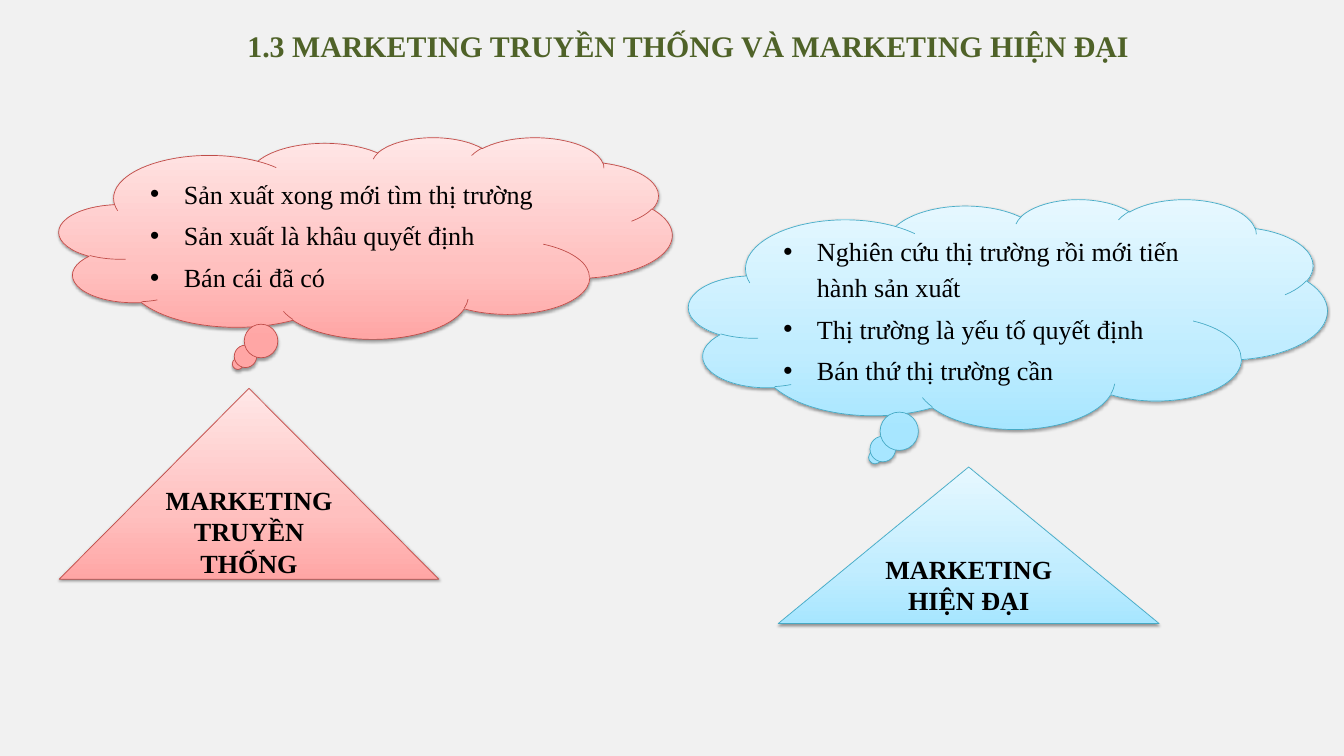
from copy import deepcopy

from lxml import etree
from pptx import Presentation
from pptx import util as u
from pptx.dml import color
from pptx.enum import shapes, text
from pptx.oxml import ns

PX = 9144
FONT = "Times New Roman"
RED = {"stops": ["FFA6A5", "FFC0BF", "FFE7E7"], "line": "BF4C48"}
BLUE = {"stops": ["A7E6FF", "C1EDFF", "E7F8FF"], "line": "46AAC5"}
STOP_POSITIONS = [0, 0.35, 1]


def rgb(value):
    return color.RGBColor.from_string(value)


def emu(*lengths):
    return [u.Emu(length * PX) for length in lengths]


def add_element(parent, tag, **attributes):
    return etree.SubElement(parent, ns.qn(tag), attributes)


def format_runs(paragraph, size, hex_color, bold=False):
    for run in paragraph.runs:
        run.font.name = FONT
        run.font.size = u.Pt(size)
        run.font.bold = bold
        run.font.color.rgb = rgb(hex_color)


def add_title(slide, box, wording):
    title = slide.shapes.title
    title.left, title.top, title.width, title.height = emu(*box)
    frame = title.text_frame
    frame.text = wording
    frame.word_wrap = True
    frame.auto_size = text.MSO_AUTO_SIZE.NONE
    frame.vertical_anchor = text.MSO_ANCHOR.TOP
    frame.paragraphs[0].alignment = text.PP_ALIGN.CENTER
    format_runs(frame.paragraphs[0], 32, "4F6228", bold=True)


def add_gradient_shape(slide, preset, box, palette):
    shape = slide.shapes.add_shape(preset, *emu(*box))
    shape.fill.gradient()
    shape.fill.gradient_angle = 90
    properties = shape.element.spPr
    stop_list = properties.find(".//" + ns.qn("a:gsLst"))
    stop_list.append(deepcopy(stop_list[0]))
    for stop, position, hex_color in zip(
        shape.fill.gradient_stops, STOP_POSITIONS, palette["stops"]
    ):
        stop.position = position
        stop.color.rgb = rgb(hex_color)
    shape.line.color.rgb = rgb(palette["line"])
    shape.line.width = u.Pt(0.75)
    shape.shadow.inherit = False
    effects = properties.find(ns.qn("a:effectLst"))
    shadow = add_element(
        effects, "a:outerShdw", blurRad="40000", dist="20000",
        dir="5400000", rotWithShape="0",
    )
    black = add_element(shadow, "a:srgbClr", val="000000")
    add_element(black, "a:alpha", val="38000")
    shape.text_frame.word_wrap = True
    shape.text_frame.vertical_anchor = text.MSO_ANCHOR.MIDDLE
    return shape


def add_cloud(slide, box, palette, items):
    cloud = add_gradient_shape(
        slide, shapes.MSO_SHAPE.CLOUD_CALLOUT, box, palette
    )
    frame = cloud.text_frame
    frame.text = "\n".join(items)
    for index, paragraph in enumerate(frame.paragraphs):
        properties = paragraph._p.get_or_add_pPr()
        properties.set("marL", str(u.Inches(0.5)))
        properties.set("indent", str(-u.Inches(0.5)))
        add_element(properties, "a:buFont", typeface="Arial")
        add_element(properties, "a:buChar", char="•")
        paragraph.alignment = text.PP_ALIGN.LEFT
        paragraph.line_spacing = 1.15
        paragraph.space_before = u.Pt(3 if index else 0)
        paragraph.space_after = u.Pt(3)
        format_runs(paragraph, 28, "000000")


def add_triangle(slide, box, palette, wording):
    triangle = add_gradient_shape(
        slide, shapes.MSO_SHAPE.ISOSCELES_TRIANGLE, box, palette
    )
    triangle.text_frame.text = wording
    paragraph = triangle.text_frame.paragraphs[0]
    paragraph.alignment = text.PP_ALIGN.CENTER
    format_runs(paragraph, 28, "000000", bold=True)


def main():
    presentation = Presentation()
    presentation.slide_width, presentation.slide_height = emu(2000, 1125)
    slide = presentation.slides.add_slide(presentation.slide_layouts[5])
    slide.background.fill.solid()
    slide.background.fill.fore_color.rgb = rgb("F1F1F1")
    add_title(
        slide, (358, 36, 1333, 64),
        "1.3 MARKETING TRUYỀN THỐNG VÀ MARKETING HIỆN ĐẠI",
    )
    add_cloud(slide, (1025, 296, 950, 342), BLUE, [
        "Nghiên cứu thị trường rồi mới tiến hành sản xuất",
        "Thị trường là yếu tố quyết định",
        "Bán thứ thị trường cần",
    ])
    add_triangle(slide, (88, 578, 565, 284), RED, "MARKETING TRUYỀN THỐNG")
    add_cloud(slide, (88, 204, 912, 300), RED, [
        "Sản xuất xong mới tìm thị trường",
        "Sản xuất là khâu quyết định",
        "Bán cái đã có",
    ])
    add_triangle(slide, (1158, 695, 567, 233), BLUE, "MARKETING HIỆN ĐẠI")
    presentation.save("out.pptx")


if __name__ == "__main__":
    main()
